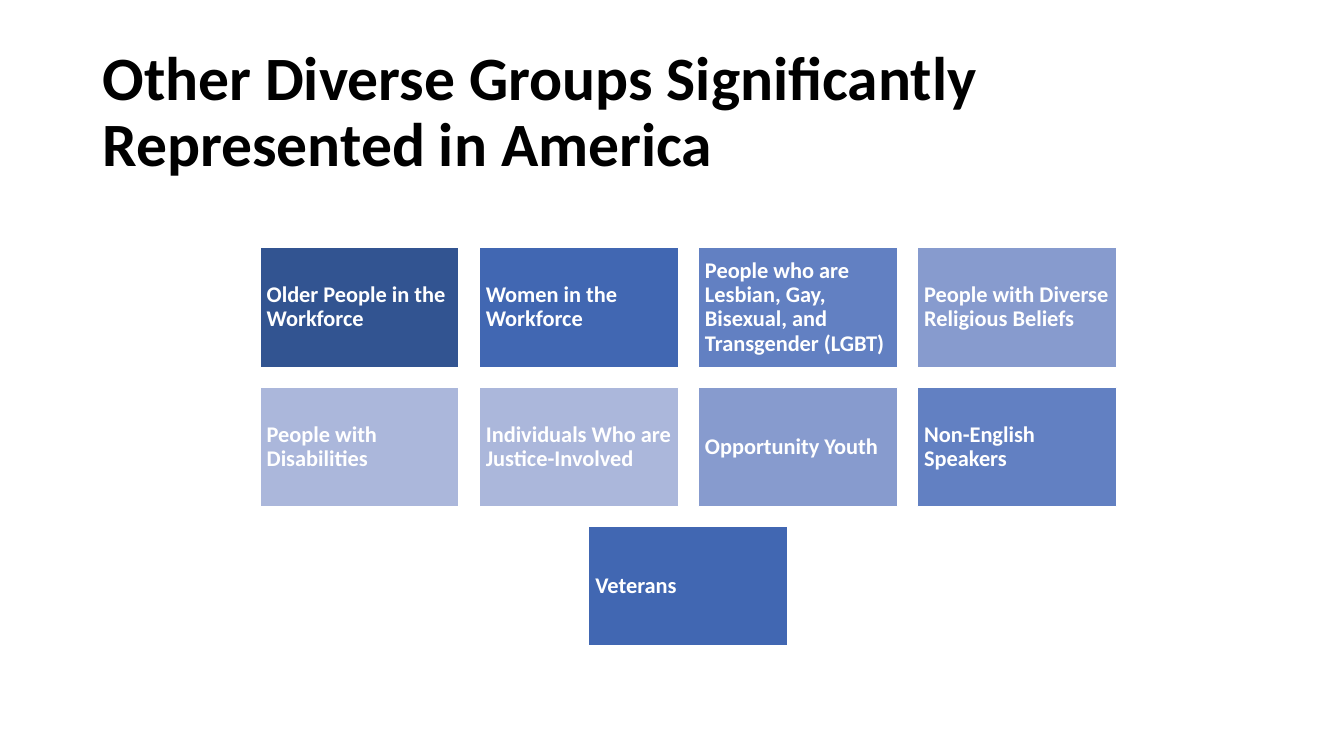
from pptx import Presentation
from pptx.dml.color import RGBColor as RGB
from pptx.enum.shapes import MSO_SHAPE as SHAPE
from pptx.enum.text import MSO_ANCHOR as ANCHOR, PP_ALIGN as ALIGN
from pptx.util import Pt

COLORS = {
    "black": "000000",
    "white": "FFFFFF",
    "navy": "325491",
    "blue": "4167B2",
    "mid": "6280C2",
    "light": "879BCE",
    "pale": "ABB7DB",
}
FONT = "Calibri"
MID_X, TOP = 491.7, 177
WIDTH = 142.3
HEIGHT = 0.6 * WIDTH
GAP = 0.1 * WIDTH

ROWS = [
    [
        ("Older People in the Workforce", "navy"),
        ("Women in the Workforce", "blue"),
        ("People who are Lesbian, Gay, Bisexual, and Transgender (LGBT)", "mid"),
        ("People with Diverse Religious Beliefs", "light"),
    ],
    [
        ("People with Disabilities", "pale"),
        ("Individuals Who are Justice-Involved", "pale"),
        ("Opportunity Youth", "light"),
        ("Non-English Speakers", "mid"),
    ],
    [("Veterans", "blue")],
]


def color(name):
    return RGB.from_string(COLORS[name])


def set_text(frame, text, size, tone):
    frame.text = text
    frame.word_wrap = True
    frame.vertical_anchor = ANCHOR.MIDDLE
    for para in frame.paragraphs:
        para.alignment = ALIGN.LEFT
        para.line_spacing = 0.9
        for run in para.runs:
            run.font.name = FONT
            run.font.size = Pt(size)
            run.font.bold = True
            run.font.color.rgb = color(tone)


def add_title(slide, text):
    title = slide.shapes.title
    title.left, title.top = Pt(66), Pt(28.75)
    title.width, title.height = Pt(828), Pt(104.4)
    set_text(title.text_frame, text, 44, "black")


def add_box(slide, text, tone, left, top):
    box = slide.shapes.add_shape(
        SHAPE.RECTANGLE, Pt(left), Pt(top), Pt(WIDTH), Pt(HEIGHT)
    )
    box.shadow.inherit = False
    box.fill.solid()
    box.fill.fore_color.rgb = color(tone)
    box.line.color.rgb = color("white")
    box.line.width = Pt(1)
    frame = box.text_frame
    frame.margin_left = frame.margin_right = Pt(4.8)
    frame.margin_top = frame.margin_bottom = Pt(4.8)
    set_text(frame, text, 16, "white")


def add_row(slide, row, top):
    span = len(row) * (WIDTH + GAP) - GAP
    for col, (text, tone) in enumerate(row):
        left = MID_X - span / 2 + col * (WIDTH + GAP)
        add_box(slide, text, tone, left, top)


def main():
    deck = Presentation()
    deck.slide_width, deck.slide_height = Pt(960), Pt(540)
    slide = deck.slides.add_slide(deck.slide_layouts[5])
    add_title(slide, "Other Diverse Groups Significantly\vRepresented in America")
    for index, row in enumerate(ROWS):
        add_row(slide, row, TOP + index * (HEIGHT + GAP))
    deck.save("out.pptx")


if __name__ == "__main__":
    main()
